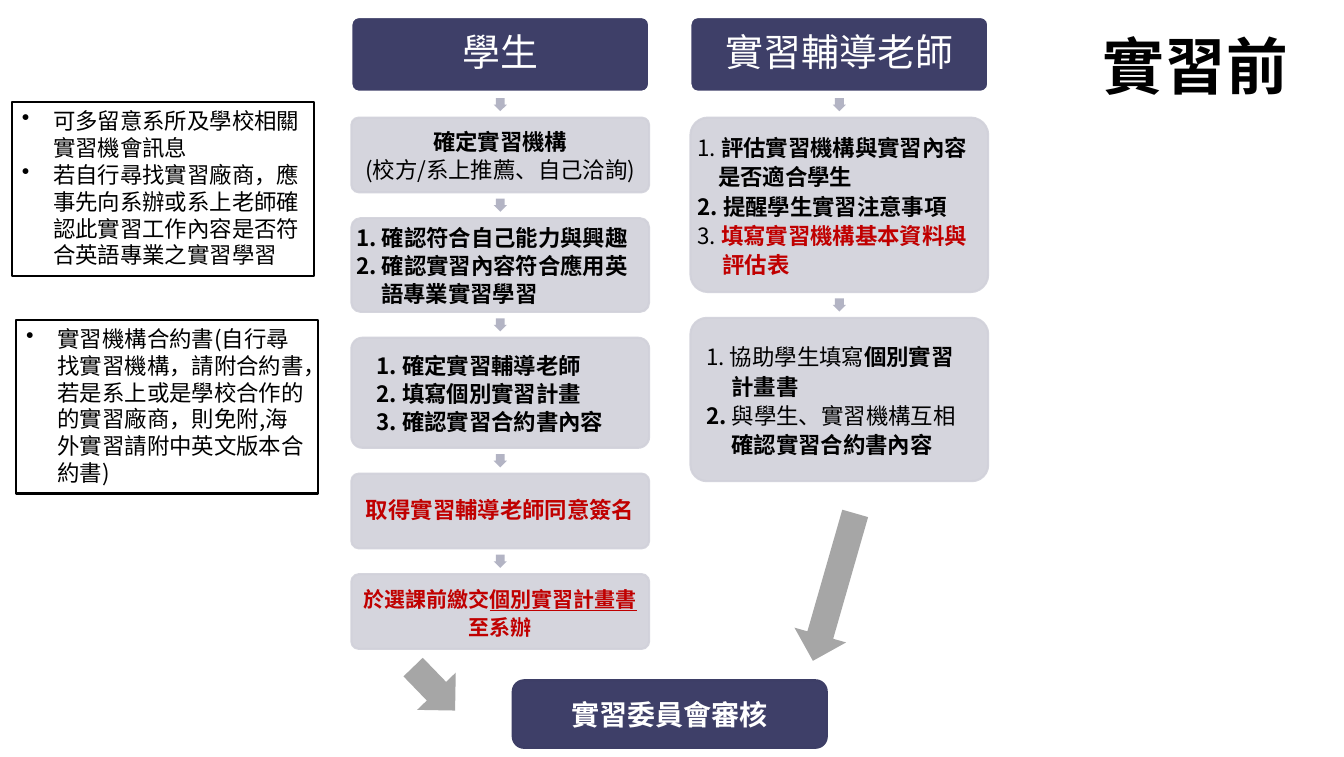
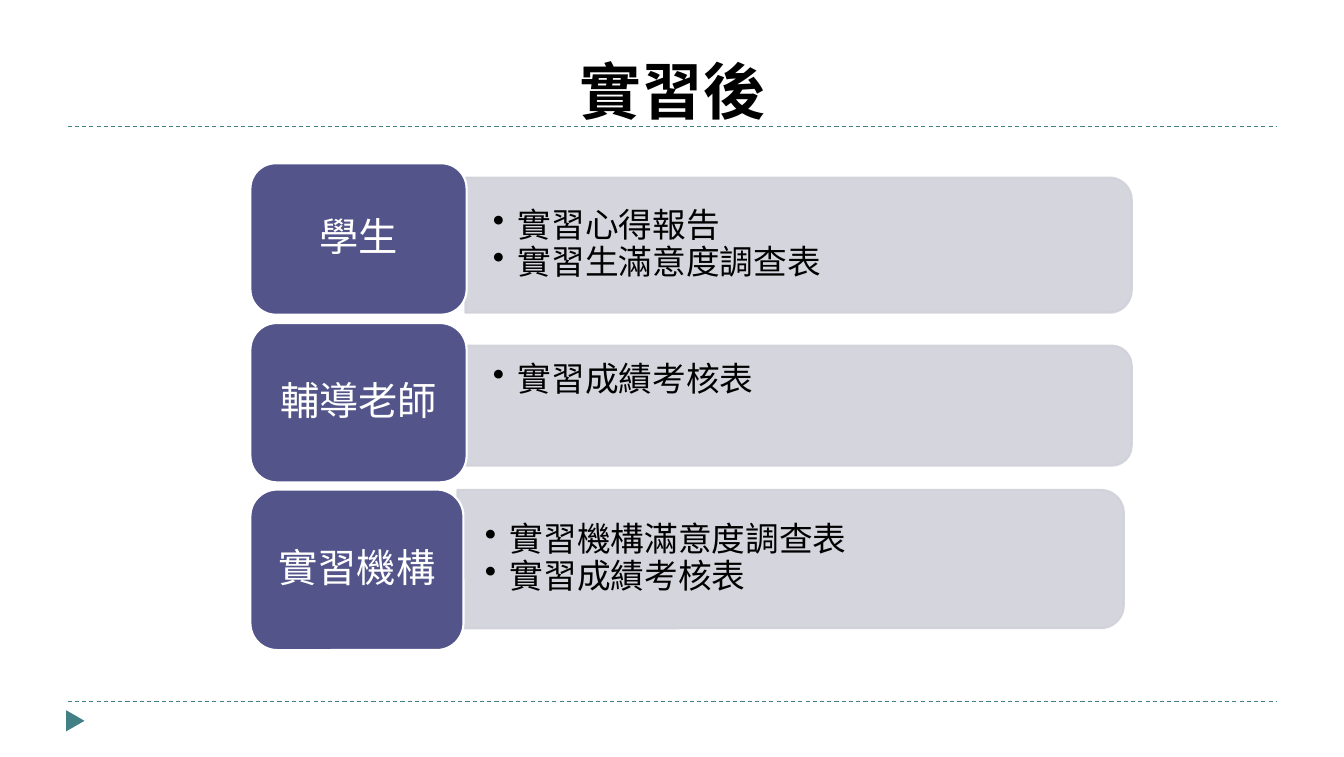
from lxml import etree
from pptx import Presentation
from pptx.dml.color import RGBColor
from pptx.enum.dml import MSO_LINE
from pptx.enum.shapes import MSO_CONNECTOR, MSO_SHAPE
from pptx.enum.text import MSO_ANCHOR, MSO_AUTO_SIZE, PP_ALIGN
from pptx.oxml.ns import qn
from pptx.util import Cm, Pt

RECT, ROUND = MSO_SHAPE.RECTANGLE, MSO_SHAPE.ROUNDED_RECTANGLE
TOP_ROUND = MSO_SHAPE.ROUND_2_SAME_RECTANGLE
ARROW, TRIANGLE = MSO_SHAPE.RIGHT_ARROW, MSO_SHAPE.ISOSCELES_TRIANGLE
STRAIGHT, DASH = MSO_CONNECTOR.STRAIGHT, MSO_LINE.DASH
TOP, MIDDLE, BOTTOM = MSO_ANCHOR.TOP, MSO_ANCHOR.MIDDLE, MSO_ANCHOR.BOTTOM
LEFT, CENTER = PP_ALIGN.LEFT, PP_ALIGN.CENTER

BLACK, WHITE, RED = "000000", "FFFFFF", "C00000"
NAVY, NAVY_EDGE, VIOLET, TEAL = "3E3F68", "3D3E66", "53548A", "438086"
PALE, SMALL_ARROW, BIG_ARROW = "D1D1DA", "B3B4C4", "A6A6A6"

FONT = "Noto Sans CJK SC"
TITLE_ONLY = 5
COLUMN_WIDTH, COLUMN_TOP = 7.49, 0.43
STEP_GAP, STEP_ARROW = 0.65, 0.33
HANG = 0.63  # indent of a continued numbered line
BOLD, PLAIN = {"bold": True}, {"bold": False}
BOLD_RED = {"bold": True, "color": RED}


def rgb(value):
    return RGBColor.from_string(value)


class Deck:
    """Holds the presentation style and the current slide."""

    def __init__(self):
        self.prs = Presentation()
        self.prs.slide_width, self.prs.slide_height = Cm(33.81), Cm(19.05)
        self.slide = None

    def new_slide(self, title, x, y, w, h):
        layout = self.prs.slide_layouts[TITLE_ONLY]
        self.slide = self.prs.slides.add_slide(layout)
        holder = self.slide.shapes.title
        holder.left, holder.top, holder.width, holder.height = map(Cm, (x, y, w, h))
        self.fill_text(holder, [title], size=44, bold=True, anchor=BOTTOM)
        holder.text_frame.margin_bottom = 0

    def fill_text(self, shape, lines, size=16, color=BLACK, bold=False, align=CENTER,
                  anchor=MIDDLE, spacing=None, inset=None, bullet=0, indent=0):
        """Each line is a string, or a tuple of left indent and runs."""
        frame = shape.text_frame
        frame.word_wrap, frame.auto_size = True, MSO_AUTO_SIZE.NONE
        frame.vertical_anchor = anchor
        if inset:
            frame.margin_left = frame.margin_right = Cm(inset[0])
            frame.margin_top = frame.margin_bottom = Cm(inset[1])
        for number, line in enumerate(lines):
            extra, *runs = (0, line) if isinstance(line, str) else line
            paragraph = frame.add_paragraph() if number else frame.paragraphs[0]
            properties = paragraph._p.get_or_add_pPr()
            if bullet or indent or extra:
                properties.set("marL", str(Cm(bullet + indent + extra)))
                properties.set("indent", str(-Cm(bullet)))
            if bullet:
                etree.SubElement(properties, qn("a:buChar"), char="•")
            paragraph.alignment = align
            if spacing:
                paragraph.line_spacing = spacing
            font = paragraph.font
            font.name, font.size, font.bold = FONT, Pt(size), bold
            font.color.rgb = rgb(color)
            etree.SubElement(properties.find(qn("a:defRPr")), qn("a:ea"), typeface=FONT)
            for part in runs:
                text, style = (part, {}) if isinstance(part, str) else part
                run = paragraph.add_run()
                run.text = text
                if "bold" in style:
                    run.font.bold = style["bold"]
                if "color" in style:
                    run.font.color.rgb = rgb(style["color"])
                if "underline" in style:
                    run.font.underline = style["underline"]

    def shape(self, kind, x, y, w, h, fill, edge=None, adjust=(), turn=0, alpha=None):
        item = self.slide.shapes.add_shape(kind, Cm(x), Cm(y), Cm(w), Cm(h))
        item.shadow.inherit = False
        item.rotation = turn
        for index, value in enumerate(adjust):
            item.adjustments[index] = value
        item.fill.solid()
        item.fill.fore_color.rgb = rgb(fill)
        if edge:
            item.line.color.rgb = rgb(edge)
            item.line.width = Pt(1.5)
        else:
            item.line.fill.background()
        if alpha:
            for tint in item._element.spPr.findall(".//" + qn("a:srgbClr")):
                etree.SubElement(tint, qn("a:alpha"), val=str(alpha * 1000))
        return item

    def note(self, x, y, lines):
        box = self.shape(RECT, x, y, 7.59, 4.37, WHITE, BLACK)
        self.fill_text(box, lines, align=LEFT, anchor=TOP, bullet=0.79)

    def column(self, x, heading, steps):
        """Heading and steps stacked with equal gaps, an arrow in each gap."""
        head_height = 1.88
        head = self.shape(ROUND, x, COLUMN_TOP, COLUMN_WIDTH, head_height,
                          NAVY, WHITE, adjust=[0.1])
        self.fill_text(head, [heading], size=27, color=WHITE, spacing=0.9,
                       inset=(0.1, 0.1))
        y = COLUMN_TOP + head_height
        for height, lines, style in steps:
            self.shape(ARROW, x + (COLUMN_WIDTH - STEP_ARROW) / 2,
                       y + (STEP_GAP - STEP_ARROW) / 2, STEP_ARROW, STEP_ARROW,
                       SMALL_ARROW, adjust=(0.67, 0.5), turn=90)
            y += STEP_GAP
            box = self.shape(ROUND, x, y, COLUMN_WIDTH, height, PALE, PALE,
                             adjust=[0.1], alpha=90)
            self.fill_text(box, lines, inset=(0.05, 0.05), **style)
            y += height

    def dashed_rule(self, y):
        rule = self.slide.shapes.add_connector(STRAIGHT, Cm(1.7), Cm(y), Cm(32.11), Cm(y))
        rule.line.color.rgb = rgb(TEAL)
        rule.line.width, rule.line.dash_style = Pt(0.75), DASH
        etree.SubElement(rule._element.spPr, qn("a:effectLst"))

    def list_panel(self, x, y, h, lines, anchor):
        w = 16.76
        # A quarter turn puts the rounded end on the right
        self.shape(TOP_ROUND, x + (w - h) / 2, y + (h - w) / 2, h, w,
                   PALE, PALE, turn=90, alpha=90)
        box = self.slide.shapes.add_textbox(Cm(x), Cm(y), Cm(w), Cm(h))
        self.fill_text(box, lines, size=24, align=LEFT, anchor=anchor, spacing=0.9,
                       inset=(0.69, 0.42), bullet=0.63)

    def label(self, y, w, h, text):
        box = self.shape(ROUND, 6.3, y, w, h, VIOLET, WHITE)
        self.fill_text(box, [text], size=28, color=WHITE, spacing=0.9, inset=(0.3, 0.15))


def before_internship(deck):
    deck.new_slide("實習前", 26.87, 0.86, 6.4, 1.7)

    # Committee review and the arrows leading to it
    deck.shape(ARROW, 10.16, 16.66, 1.52, 1.35, BIG_ARROW, turn=46)
    deck.shape(ARROW, 19.05, 14.1, 3.86, 1.35, BIG_ARROW, turn=106)
    review = deck.shape(ROUND, 12.9, 17.12, 7.9, 1.7, NAVY, NAVY_EDGE)
    deck.fill_text(review, ["實習委員會審核"], size=20, color=WHITE, bold=True)

    # Side notes
    deck.note(0.3, 2.57, [
        "可多留意系所及學校相關實習機會訊息",
        "若自行尋找實習廠商，應事先向系辦或系上老師確認此實習工作內容是否符合英語專業之實習學習",
    ])
    deck.note(0.41, 8.05, [
        "實習機構合約書(自行尋找實習機構，請附合約書，若是系上或是學校合作的的實習廠商，"
        "則免附,海外實習請附中英文版本合約書)",
    ])

    # Student and teacher columns
    centred = {"spacing": Pt(20)}
    numbered = {"spacing": Pt(20), "align": LEFT, "bold": True}
    teacher = {"spacing": Pt(21), "align": LEFT}
    deck.column(8.84, "學生", [
        (1.88, [(0, ("確定實習機構", BOLD)), "(校方/系上推薦、自己洽詢)"], centred),
        (2.36, ["1. 確認符合自己能力與興趣", "2. 確認實習內容符合應用英",
                (HANG, "語專業實習學習")], numbered),
        (2.77, ["1. 確定實習輔導老師", "2. 填寫個別實習計畫", "3. 確認實習合約書內容"],
         {**numbered, "indent": 0.5}),
        (1.88, ["取得實習輔導老師同意簽名"], {**BOLD_RED, "spacing": 0.9}),
        (1.88, [(0, "於選課前繳交", ("個別實習計畫書", {"underline": True})), "至系辦"],
         {**centred, **BOLD_RED, "size": 15}),
    ])
    deck.column(17.37, "實習輔導老師", [
        (4.39, [(0, "1. ", ("評估實習機構與實習內容", BOLD)),
                (0.52, ("是否適合學生", BOLD)),
                (0, ("2. 提醒學生實習注意事項", BOLD)),
                (0, "3. ", ("填寫實習機構基本資料與", BOLD_RED)),
                (HANG, ("評估表", BOLD_RED))], teacher),
        (4.11, [(0, "1. 協助學生填寫", ("個別實習", BOLD)),
                (HANG, ("計畫書", BOLD)),
                (0, ("2. ", BOLD), ("與學生、實習機構互相", PLAIN)),
                (HANG, ("確認實習合約書內容", BOLD))], {**teacher, "indent": 0.23}),
    ])


def after_internship(deck):
    deck.new_slide("實習後", 1.7, 0.64, 30.43, 2.54)

    # Title and footer rules with the corner marker
    for y in (3.18, 17.65):
        deck.dashed_rule(y)
    deck.shape(TRIANGLE, 1.63, 17.91, 0.53, 0.46, TEAL, turn=90)

    # Documents due from each party: panel first, label over its left edge
    parties = [
        ((11.71, 4.47, 3.4), ["實習心得報告", "實習生滿意度調查表"], MIDDLE,
         (4.11, 5.44, 3.81), "學生"),
        ((11.71, 8.7, 3.02), ["實習成績考核表"], TOP,
         (8.13, 5.44, 4.01), "輔導老師"),
        ((11.51, 12.33, 3.48), ["實習機構滿意度調查表", "實習成績考核表"], MIDDLE,
         (12.32, 5.36, 4.04), "實習機構"),
    ]
    for panel, documents, anchor, label, party in parties:
        deck.list_panel(*panel, documents, anchor)
        deck.label(*label, party)


def main():
    deck = Deck()
    before_internship(deck)
    after_internship(deck)
    deck.prs.save("out.pptx")


if __name__ == "__main__":
    main()
